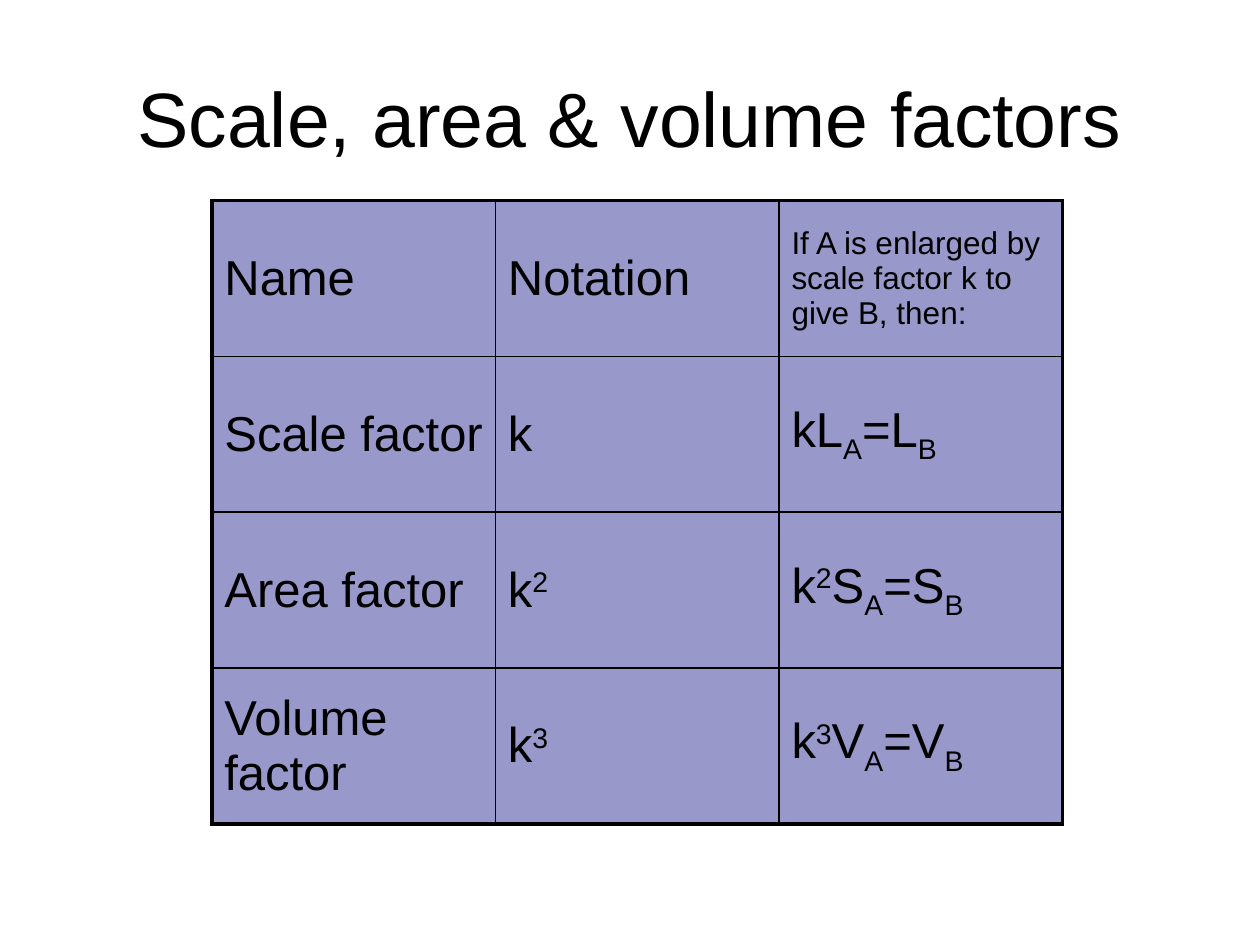
from dataclasses import dataclass

from lxml.etree import SubElement
from pptx import Presentation
from pptx.dml.color import RGBColor
from pptx.enum.text import MSO_ANCHOR, PP_ALIGN
from pptx.oxml import parse_xml
from pptx.oxml.ns import nsdecls, qn
from pptx.util import Cm, Pt

FONT = "Arial"
BLACK = "000000"
CELL_FILL = "333399"
THICK, THIN = 2.25, 1
BASELINES = {"^": 30000, "_": -25000}


@dataclass
class CellText:
    """Cell wording; ^ raises and _ lowers the one character that follows."""
    markup: str
    size: float = 28


ROWS = [
    [CellText("Name"), CellText("Notation"),
     CellText("If A is enlarged by scale factor k to give B, then:", 18)],
    [CellText("Scale factor"), CellText("k"), CellText("kL_A=L_B")],
    [CellText("Area factor"), CellText("k^2"), CellText("k^2S_A=S_B")],
    [CellText("Volume factor"), CellText("k^3"), CellText("k^3V_A=V_B")],
]


def set_color(color_format, value: str) -> None:
    color_format.rgb = RGBColor.from_string(value)


def format_run(r, size: float) -> None:
    r.font.name = FONT
    r.font.size = Pt(size)
    set_color(r.font.color, BLACK)


def split_markup(markup: str) -> list[tuple[str, int]]:
    """Split the markup into pairs of text and baseline shift."""
    parts, plain, mark = [], "", ""
    for char in markup:
        if mark:
            parts.append((char, BASELINES[mark]))
            mark = ""
        elif char in BASELINES:
            if plain:
                parts.append((plain, 0))
            plain, mark = "", char
        else:
            plain += char
    return parts + [(plain, 0)] if plain else parts


def write_cell(cell, content: CellText) -> None:
    cell.vertical_anchor = MSO_ANCHOR.MIDDLE
    p = cell.text_frame.paragraphs[0]
    p.alignment = PP_ALIGN.LEFT
    space = SubElement(p._p.get_or_add_pPr(), qn("a:spcBef"))
    SubElement(space, qn("a:spcPct")).set("val", "20000")
    for text, baseline in split_markup(content.markup):
        r = p.add_run()
        r.text = text
        format_run(r, content.size)
        if baseline:
            r.font._element.set("baseline", str(baseline))


def fill_cell(cell, value: str, alpha: int) -> None:
    cell.fill.solid()
    set_color(cell.fill.fore_color, value)
    color = cell._tc.tcPr.find(".//" + qn("a:srgbClr"))
    SubElement(color, qn("a:alpha")).set("val", str(alpha * 1000))


def set_borders(cell, widths: dict[str, float]) -> None:
    """Put the border lines, keyed L, R, T, B in that order, before the fill."""
    for i, (side, width) in enumerate(widths.items()):
        line = parse_xml(
            f'<a:ln{side} {nsdecls("a")} w="{Pt(width)}"><a:solidFill>'
            f'<a:srgbClr val="{BLACK}"/></a:solidFill></a:ln{side}>')
        cell._tc.get_or_add_tcPr().insert(i, line)


def add_title(s, text: str) -> None:
    title = s.shapes.title
    title.left, title.top, title.width, title.height = (
        Cm(1.27), Cm(0.76), Cm(22.86), Cm(3.18))
    tf = title.text_frame
    tf.text = text
    tf.vertical_anchor = MSO_ANCHOR.MIDDLE
    p = tf.paragraphs[0]
    p.alignment = PP_ALIGN.CENTER
    format_run(p.runs[0], 44)


def add_factor_table(s) -> None:
    last_row, last_col = len(ROWS) - 1, len(ROWS[0]) - 1
    table = s.shapes.add_table(len(ROWS), len(ROWS[0]), Cm(4.27), Cm(4.04),
                               Cm(17.15), Cm(12.57)).table
    table.first_row = table.horz_banding = False
    for i, row in enumerate(ROWS):
        for j, content in enumerate(row):
            cell = table.cell(i, j)
            write_cell(cell, content)
            fill_cell(cell, CELL_FILL, alpha=50)
            set_borders(cell, {
                "L": THICK if j == 0 else THIN,
                "R": THICK if j == last_col else THIN,
                "T": THICK if i == 0 else THIN,
                "B": THICK if i == last_row else THIN,
            })


def main() -> None:
    prs = Presentation()
    prs.slide_width, prs.slide_height = Cm(25.4), Cm(19.05)
    s = prs.slides.add_slide(prs.slide_layouts[5])
    add_title(s, "Scale, area & volume factors")
    add_factor_table(s)
    prs.save("out.pptx")


if __name__ == "__main__":
    main()
